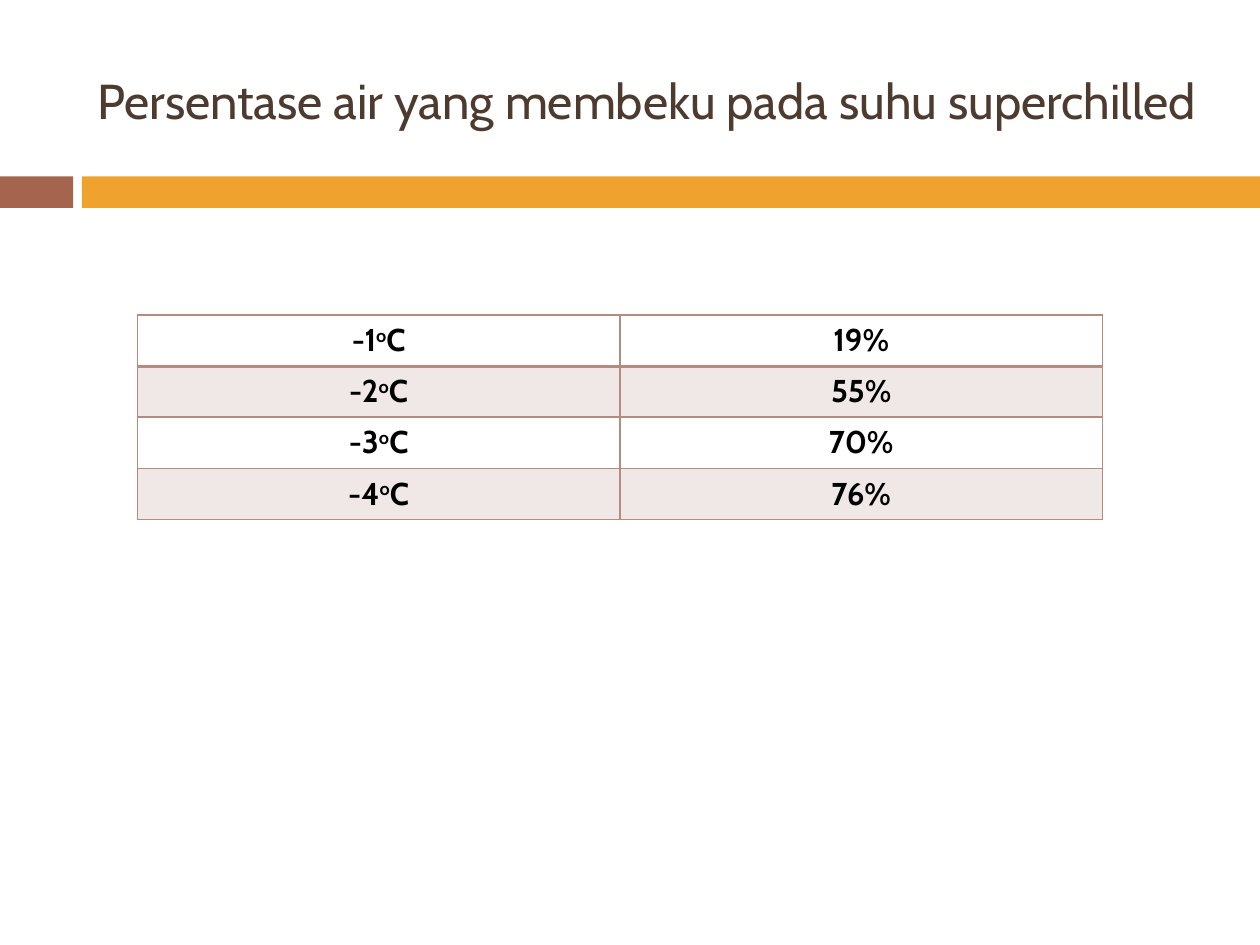
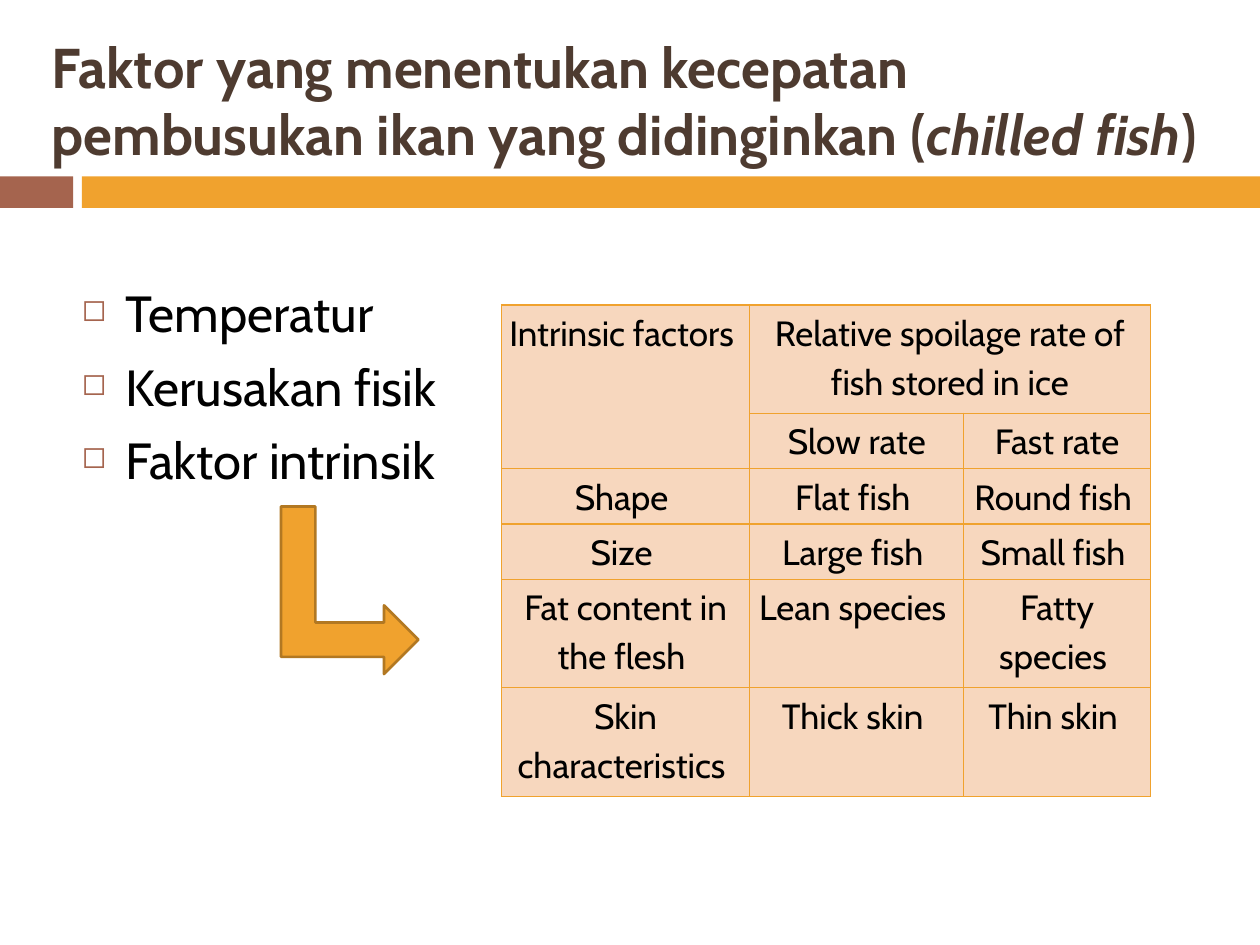
"""Build two slides on superchilled and chilled fish."""
from lxml.etree import SubElement
from pptx import Presentation
from pptx.dml.color import RGBColor
from pptx.enum.shapes import MSO_SHAPE
from pptx.enum.text import MSO_ANCHOR, MSO_AUTO_SIZE, PP_ALIGN
from pptx.oxml.ns import qn
from pptx.util import Inches, Pt

BROWN = RGBColor(0x4E, 0x3B, 0x30)
RUST = RGBColor(0xA5, 0x64, 0x4E)
ORANGE = RGBColor(0xF0, 0xA2, 0x2E)
DARK_ORANGE = RGBColor(0xB2, 0x78, 0x22)
ROSE = RGBColor(0xB5, 0x8B, 0x80)
PALE_ROSE = RGBColor(0xF0, 0xE8, 0xE6)
PEACH = RGBColor(0xF7, 0xD7, 0xBE)
BLACK = RGBColor(0, 0, 0)

FONT = "Cabin"
WIDTH, HEIGHT = 10, 7.5
BAND_TOP, BAND_HEIGHT = 1.4, 0.25
BANDS = [(0, 0.58, RUST), (0.65, WIDTH - 0.65, ORANGE)]

FREEZING_TITLE = [("Persentase air yang membeku pada suhu superchilled", {})]
FROZEN_WATER = [("-1", "19%"), ("-2", "55%"), ("-3", "70%"), ("-4", "76%")]

SPOILAGE_TITLE = [
    ("Faktor yang menentukan kecepatan pembusukan ikan yang didinginkan (", {}),
    ("chilled fish", {"italic": True}),
    (")", {}),
]
FACTORS = ["Temperatur", "Kerusakan fisik", "Faktor intrinsik"]
SPOILAGE_RATES = [
    ("Intrinsic factors ", "Relative spoilage rate of fish stored in ice", ""),
    ("", "Slow rate", "Fast rate"),
    ("Shape ", "Flat fish ", "Round fish "),
    ("Size ", "Large fish ", "Small fish "),
    ("Fat content in the flesh ", "Lean species ", "Fatty species "),
    ("Skin characteristics ", "Thick skin ", "Thin skin "),
]
SPOILAGE_COLUMNS = [1.97, 1.7, 1.48]
SHORT_ROW, TALL_ROW = 0.44, 0.86
TALL_ROWS = {0, 4, 5}

TITLE_FRAME = {"vertical_anchor": MSO_ANCHOR.MIDDLE, "word_wrap": True,
               "auto_size": MSO_AUTO_SIZE.NONE}
CENTRED = {"alignment": PP_ALIGN.CENTER}
SPACED = {**CENTRED, "line_spacing": 1.15, "space_after": Pt(10)}
TIGHT = dict.fromkeys(
    ("margin_left", "margin_right", "margin_top", "margin_bottom"), Inches(0.01))


def apply(target, values):
    for key, value in values.items():
        setattr(target, key, value)


def write(paragraph, runs, size, color=BLACK, bold=False, layout=None):
    apply(paragraph, layout or {})
    for text, extra in runs:
        run = paragraph.add_run()
        run.text = text
        style = {"name": FONT, "size": Pt(size), "bold": bold, **extra}
        baseline = style.pop("baseline", None)
        apply(run.font, style)
        run.font.color.rgb = color
        if baseline:
            run.font._element.set("baseline", str(baseline * 1000))


def add_block(slide, preset, box, fill):
    block = slide.shapes.add_shape(preset, *map(Inches, box))
    block.shadow.inherit = False
    block.fill.solid()
    block.fill.fore_color.rgb = fill
    block.line.fill.background()
    return block


def add_slide(deck, title_runs, left, width, size, bold=False):
    slide = deck.slides.add_slide(deck.slide_layouts[5])
    for band_left, band_width, color in BANDS:
        add_block(slide, MSO_SHAPE.RECTANGLE,
                  (band_left, BAND_TOP, band_width, BAND_HEIGHT), color)
    title = slide.shapes.title
    apply(title, {"left": Inches(left), "top": Inches(0.25),
                  "width": Inches(width), "height": Inches(1.08)})
    apply(title.text_frame, TITLE_FRAME)
    write(title.text_frame.paragraphs[0], title_runs, size, BROWN, bold,
          {"alignment": PP_ALIGN.LEFT})
    return slide


def add_grid(slide, row_count, column_count, box):
    grid = slide.shapes.add_table(row_count, column_count, *map(Inches, box)).table
    apply(grid, {"first_row": False, "horz_banding": False})
    return grid


def style_cell(cell, fill, border, bottom_width, width):
    properties = cell._tc.get_or_add_tcPr()
    for side in "LRTB":
        points = bottom_width if side == "B" else width
        line = SubElement(properties, qn(f"a:ln{side}"), w=str(Pt(points)))
        SubElement(SubElement(line, qn("a:solidFill")), qn("a:srgbClr"),
                   val=str(border))
    if fill is None:
        cell.fill.background()
    else:
        cell.fill.solid()
        cell.fill.fore_color.rgb = fill


def add_bullet(paragraph):
    properties = paragraph._p.get_or_add_pPr()
    indent = Inches(0.35)
    properties.set("marL", str(indent))
    properties.set("indent", str(-indent))
    SubElement(SubElement(properties, qn("a:buClr")), qn("a:srgbClr"), val=str(RUST))
    SubElement(properties, qn("a:buSzPct"), val="60000")
    SubElement(properties, qn("a:buChar"), char="◻")


def build_freezing(deck):
    slide = add_slide(deck, FREEZING_TITLE, 0.67, 8.92, 28)
    grid = add_grid(slide, len(FROZEN_WATER), 2, (1.09, 2.5, 7.66, 1.62))
    for row, (degrees, share) in enumerate(FROZEN_WATER):
        temperature = [(degrees, {}), ("o", {"baseline": 30}), ("C", {})]
        for column, runs in enumerate([temperature, [(share, {})]]):
            cell = grid.cell(row, column)
            style_cell(cell, PALE_ROSE if row % 2 else None, ROSE,
                       bottom_width=1 if row else 2, width=1)
            write(cell.text_frame.paragraphs[0], runs, 18, bold=True, layout=CENTRED)


def build_spoilage(deck):
    slide = add_slide(deck, SPOILAGE_TITLE, 0.31, 9.53, 32, bold=True)

    factors = slide.shapes.add_textbox(*map(Inches, (0.55, 2.19, 8.92, 4.92))).text_frame
    factors.word_wrap = True
    for index, factor in enumerate(FACTORS):
        paragraph = factors.add_paragraph() if index else factors.paragraphs[0]
        write(paragraph, [(factor, {})], 29, layout={"space_before": Pt(7)})
        add_bullet(paragraph)

    grid = add_grid(slide, len(SPOILAGE_RATES), len(SPOILAGE_COLUMNS),
                    (3.98, 2.42, 5.16, 3.91))
    for column, width in zip(grid.columns, SPOILAGE_COLUMNS):
        column.width = Inches(width)
    for row, texts in enumerate(SPOILAGE_RATES):
        grid.rows[row].height = Inches(TALL_ROW if row in TALL_ROWS else SHORT_ROW)
        for column, text in enumerate(texts):
            cell = grid.cell(row, column)
            apply(cell, TIGHT)
            style_cell(cell, PEACH, ORANGE, bottom_width=0.79, width=0.79)
            if text:
                write(cell.text_frame.paragraphs[0], [(text, {})], 20, layout=SPACED)
    grid.cell(0, 0).merge(grid.cell(1, 0))
    grid.cell(0, 1).merge(grid.cell(0, 2))

    arrow = add_block(slide, MSO_SHAPE.BENT_UP_ARROW, (2.11, 4.14, 1.33, 1.09), ORANGE)
    arrow.rotation = 90
    arrow.line.color.rgb = DARK_ORANGE
    arrow.line.width = Pt(1.5)


def main():
    deck = Presentation()
    apply(deck, {"slide_width": Inches(WIDTH), "slide_height": Inches(HEIGHT)})
    build_freezing(deck)
    build_spoilage(deck)
    deck.save("out.pptx")


if __name__ == "__main__":
    main()
